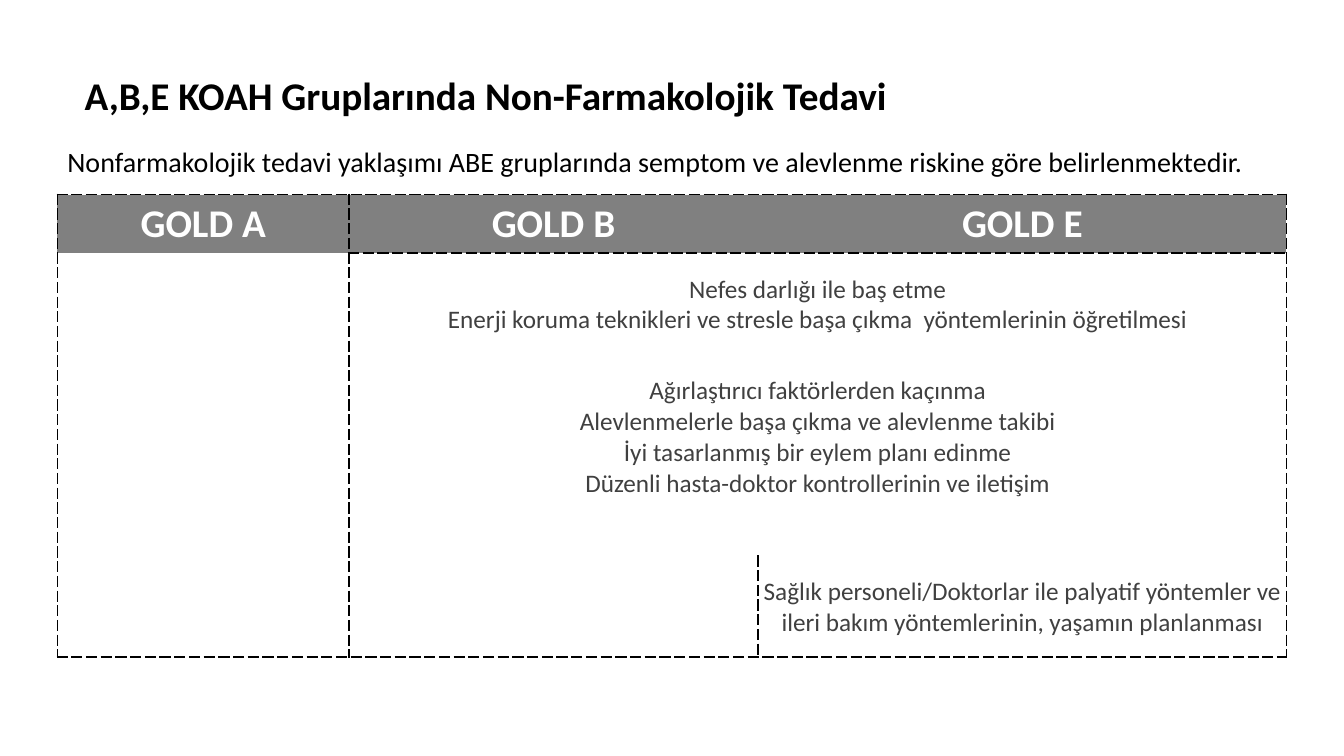
from lxml import etree
from pptx import Presentation
from pptx import util as u
from pptx.dml import color
from pptx.enum import text
from pptx.oxml import ns

COLUMNS = (2.89, 4.06, 5.24)
ROWS = (0.58, 1.01, 1.99, 1.01)
LAST_ROW = len(ROWS) - 1
GROUPS = ("GOLD A", "GOLD B", "GOLD E")
SHARED_ADVICE = {
    1: "Nefes darlığı ile baş etme\n"
       "Enerji koruma teknikleri ve stresle başa çıkma  yöntemlerinin öğretilmesi",
    2: "Ağırlaştırıcı faktörlerden kaçınma\n"
       "Alevlenmelerle başa çıkma ve alevlenme takibi\n"
       "İyi tasarlanmış bir eylem planı edinme\n"
       "Düzenli hasta-doktor kontrollerinin ve iletişim",
}
GOLD_E_ADVICE = ("Sağlık personeli/Doktorlar ile palyatif yöntemler ve "
                 "ileri bakım yöntemlerinin, yaşamın planlanması")


def rgb(value):
    return color.RGBColor.from_string(value)


def write(frame, words, size, ink, bold=False, align=text.PP_ALIGN.LEFT):
    frame.text = words
    for para in frame.paragraphs:
        para.alignment = align
        for span in para.runs:
            span.font.name = "Calibri"
            span.font.size = u.Pt(size)
            span.font.bold = bold
            span.font.color.rgb = rgb(ink)


def place(shape, left, top, width, height):
    shape.left, shape.top = u.Inches(left), u.Inches(top)
    shape.width, shape.height = u.Inches(width), u.Inches(height)


def add_title(page, left, top, width, height):
    title = page.shapes.title
    place(title, left, top, width, height)
    title.text_frame.vertical_anchor = text.MSO_ANCHOR.TOP
    write(title.text_frame, "A,B,E KOAH Gruplarında Non-Farmakolojik Tedavi",
          28, "000000", bold=True)


def add_summary(page, left, top, width, height):
    box = page.shapes.add_textbox(*map(u.Inches, (left, top, width, height)))
    box.text_frame.word_wrap = False
    box.text_frame.vertical_anchor = text.MSO_ANCHOR.MIDDLE
    write(box.text_frame,
          "Nonfarmakolojik tedavi yaklaşımı ABE gruplarında semptom ve "
          "alevlenme riskine göre belirlenmektedir.", 20, "000000")


def has_vertical_rule(row, edge):
    """Only the last row separates the second and third columns."""
    return edge != 2 or row == LAST_ROW


def has_horizontal_rule(column, edge):
    """The header is ruled off below GOLD B and GOLD E only."""
    return edge in (0, len(ROWS)) or (edge == 1 and column > 0)


def set_borders(cell, row, column):
    span = cell.span_width if cell.is_merge_origin else 1
    sides = (
        ("lnL", has_vertical_rule(row, column)),
        ("lnR", has_vertical_rule(row, column + span)),
        ("lnT", has_horizontal_rule(column, row)),
        ("lnB", has_horizontal_rule(column, row + 1)),
    )
    properties = cell._tc.get_or_add_tcPr()
    for position, (side, ruled) in enumerate(sides):
        line = etree.Element(ns.qn("a:" + side), w=str(u.Pt(1.5)))
        if ruled:
            fill = etree.SubElement(line, ns.qn("a:solidFill"))
            etree.SubElement(fill, ns.qn("a:srgbClr"), val="000000")
            etree.SubElement(line, ns.qn("a:prstDash"), val="dash")
        else:
            etree.SubElement(line, ns.qn("a:noFill"))
        properties.insert(position, line)


def format_cell(cell, row, column):
    cell.margin_left = cell.margin_right = u.Inches(0.05)
    cell.margin_top = u.Inches(0.21 if row else 0.02)
    cell.margin_bottom = u.Inches(0.02)
    cell.vertical_anchor = text.MSO_ANCHOR.TOP if row else text.MSO_ANCHOR.MIDDLE
    cell.fill.solid()
    cell.fill.fore_color.rgb = rgb("FFFFFF" if row else "808080")
    set_borders(cell, row, column)


def add_treatment_table(page, left, top):
    box = map(u.Inches, (left, top, sum(COLUMNS), sum(ROWS)))
    table = page.shapes.add_table(len(ROWS), len(COLUMNS), *box).table
    for column, width in zip(table.columns, COLUMNS):
        column.width = u.Inches(width)
    for row, height in zip(table.rows, ROWS):
        row.height = u.Inches(height)

    center = text.PP_ALIGN.CENTER
    for column, group in enumerate(GROUPS):
        write(table.cell(0, column).text_frame, group, 28, "FFFFFF", True, center)
    for row, advice in SHARED_ADVICE.items():
        table.cell(row, 1).merge(table.cell(row, 2))
        write(table.cell(row, 1).text_frame, advice, 18, "404040", align=center)
    write(table.cell(LAST_ROW, 2).text_frame, GOLD_E_ADVICE, 18, "404040", align=center)

    for row in range(len(ROWS)):
        for column in range(len(COLUMNS)):
            format_cell(table.cell(row, column), row, column)


def main():
    deck = Presentation()
    deck.slide_width, deck.slide_height = u.Inches(13.33), u.Inches(7.5)
    page = deck.slides.add_slide(deck.slide_layouts[5])
    add_title(page, 0.74, 0.66, 10, 0.57)
    add_summary(page, 0.57, 1.38, 12.19, 0.44)
    add_treatment_table(page, 0.57, 1.93)
    deck.save("out.pptx")


if __name__ == "__main__":
    main()
